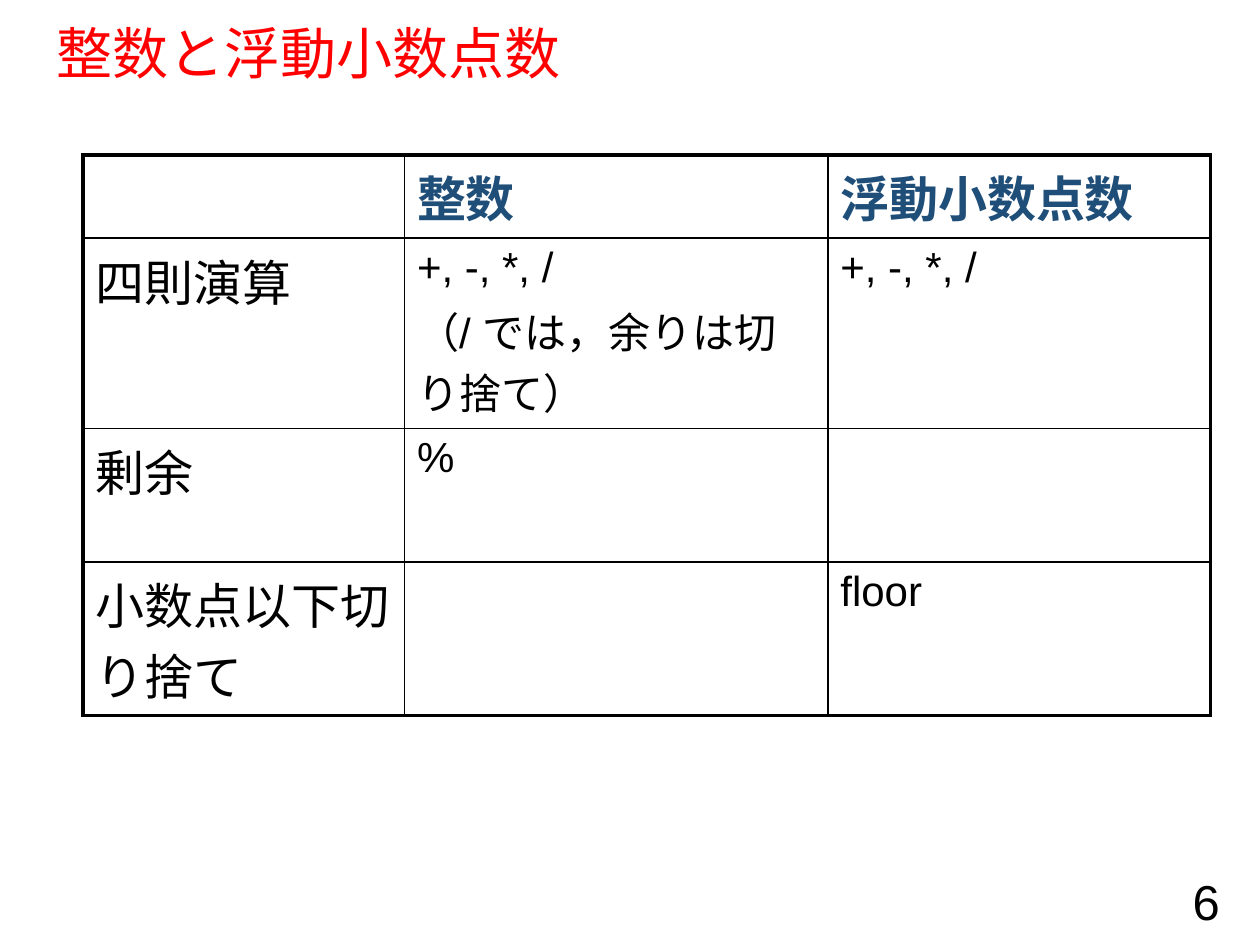
from lxml.etree import SubElement
from pptx import Presentation
from pptx.dml.color import RGBColor
from pptx.enum.text import MSO_ANCHOR as Anchor, MSO_AUTO_SIZE as AutoSize, PP_ALIGN as Align
from pptx.oxml.ns import qn
from pptx.util import Inches, Pt

RED = RGBColor(0xFF, 0x00, 0x00)
NAVY = RGBColor(0x1F, 0x4E, 0x79)
BLACK = RGBColor(0x00, 0x00, 0x00)

ROWS = [
    ["", "整数", "浮動小数点数"],
    ["四則演算", "+, -, *, /\n（/ では，余りは切り捨て）", "+, -, *, /"],
    ["剰余", "%", ""],
    ["小数点以下切り捨て", "", "floor"],
]
COLUMN_WIDTHS = [2.55, 3.36, 3.04]
ROW_HEIGHTS = [0.66, 1.51, 1.06, 1.22]


def write(frame, text, size, color=BLACK, bold=False, align=Align.LEFT, line_spacing=None):
    frame.text = text
    for index, paragraph in enumerate(frame.paragraphs):
        paragraph.alignment = align
        paragraph.line_spacing = line_spacing
        if index:
            paragraph.space_before = Pt(size * 0.2)
        for run in paragraph.runs:
            run.font.name = "Arial"
            run.font.size = Pt(size)
            run.font.bold = bold
            run.font.color.rgb = color


def add_border(cell, side, width):
    line = SubElement(cell._tc.get_or_add_tcPr(), qn(f"a:ln{side}"), w=str(Pt(width)))
    fill = SubElement(line, qn("a:solidFill"))
    SubElement(fill, qn("a:srgbClr"), val=str(BLACK))


presentation = Presentation()
presentation.slide_width = Inches(10)
presentation.slide_height = Inches(7.5)
slide = presentation.slides.add_slide(presentation.slide_layouts[5])

title = slide.shapes.title
title.left, title.top = Inches(0.35), Inches(0.19)
title.width, title.height = Inches(9.25), Inches(0.51)
title.text_frame.auto_size = AutoSize.NONE
title.text_frame.vertical_anchor = Anchor.MIDDLE
write(title.text_frame, "整数と浮動小数点数", size=32, color=RED, line_spacing=0.9)

page_number = slide.shapes.add_textbox(Inches(7.53), Inches(6.95), Inches(2.25), Inches(0.4))
page_number.text_frame.word_wrap = True
page_number.text_frame.vertical_anchor = Anchor.MIDDLE
write(page_number.text_frame, "6", size=28, align=Align.RIGHT)

table = slide.shapes.add_table(
    len(ROWS), len(COLUMN_WIDTHS), Inches(0.66), Inches(1.23),
    Inches(sum(COLUMN_WIDTHS)), Inches(sum(ROW_HEIGHTS)),
).table
table.first_row = False
table.horz_banding = False
for column, width in zip(table.columns, COLUMN_WIDTHS):
    column.width = Inches(width)
for row, height in zip(table.rows, ROW_HEIGHTS):
    row.height = Inches(height)

last_row, last_column = len(ROWS) - 1, len(COLUMN_WIDTHS) - 1
for row_index, texts in enumerate(ROWS):
    for column_index, text in enumerate(texts):
        cell = table.cell(row_index, column_index)
        outer_sides = {
            "L": column_index == 0,
            "R": column_index == last_column,
            "T": row_index == 0,
            "B": row_index == last_row,
        }
        for side, is_outer in outer_sides.items():
            add_border(cell, side, 2.25 if is_outer else 1)
        cell.fill.background()
        is_header = row_index == 0
        is_label = is_header or column_index == 0
        if text:
            write(cell.text_frame, text, size=28 if is_label else 24,
                  color=NAVY if is_header else BLACK, bold=is_header)

presentation.save("out.pptx")
